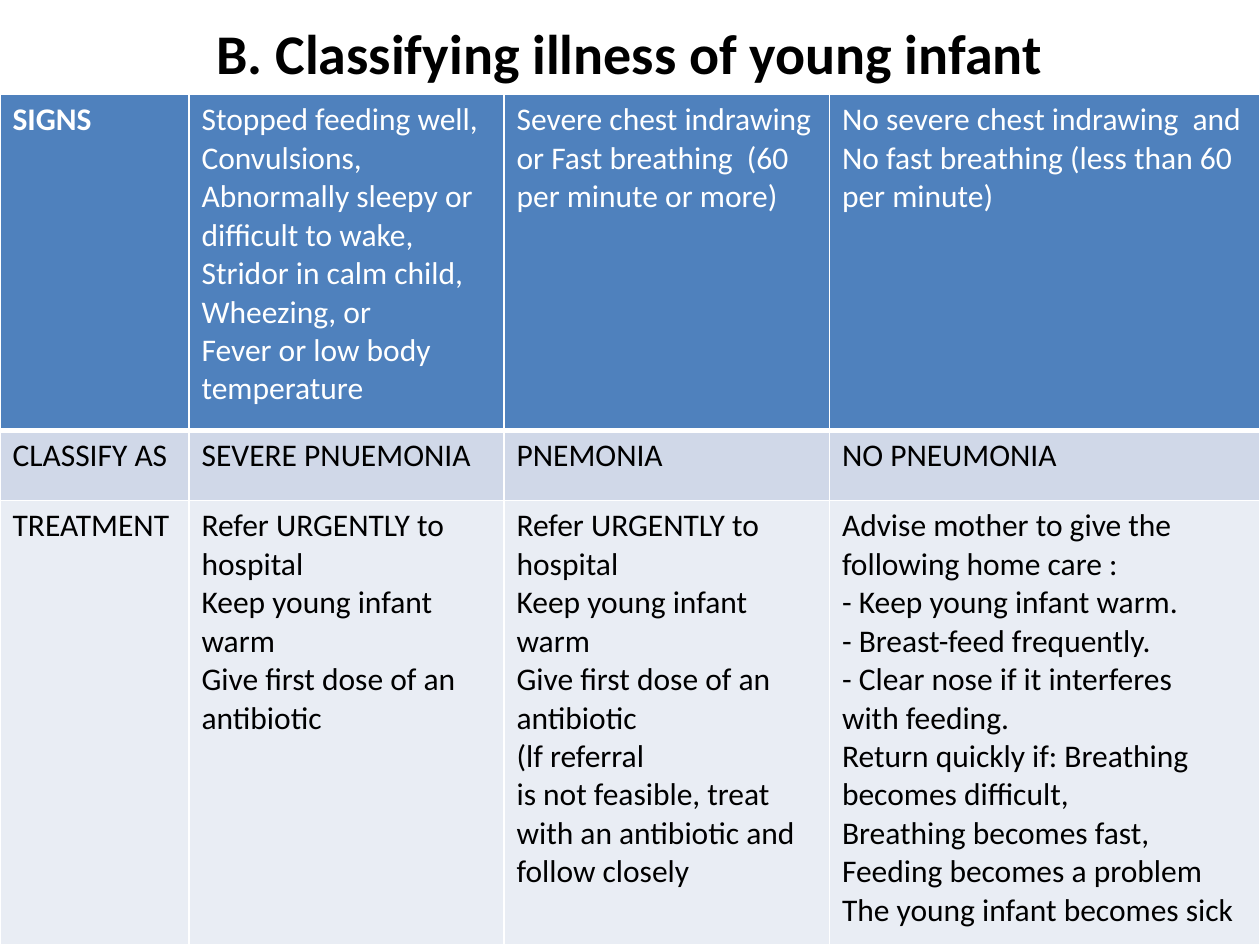
from lxml.etree import SubElement
from pptx import Presentation
from pptx.dml.color import RGBColor
from pptx.enum.text import MSO_ANCHOR, PP_ALIGN
from pptx.oxml.ns import qn
from pptx.util import Pt

TITLE = "B. Classifying illness of young infant"
REFER = [
    "Refer URGENTLY to hospital",
    "Keep young infant warm",
    "Give first dose of an antibiotic",
]
ROWS = [
    [
        ["SIGNS"],
        [
            "Stopped feeding well,",
            "Convulsions,",
            "Abnormally sleepy or difficult to wake,",
            "Stridor in calm child,",
            "Wheezing, or",
            "Fever or low body temperature",
        ],
        ["Severe chest indrawing or Fast breathing  (60 per minute or more)"],
        ["No severe chest indrawing  and No fast breathing (less than 60 per minute)"],
    ],
    [["CLASSIFY AS"], ["SEVERE PNUEMONIA"], ["PNEMONIA"], ["NO PNEUMONIA"]],
    [
        ["TREATMENT"],
        REFER,
        REFER + [
            "(lf referral",
            "is not feasible, treat",
            "with an antibiotic and",
            "follow closely",
        ],
        [
            "Advise mother to give the",
            "following home care :",
            "- Keep young infant warm.",
            "- Breast-feed frequently.",
            "- Clear nose if it interferes",
            "with feeding.",
            "Return quickly if: Breathing",
            "becomes difficult,",
            "Breathing becomes fast,",
            "Feeding becomes a problem",
            "The young infant becomes sick",
        ],
    ],
]

THEME = {
    "font": "Calibri",
    "title_size": 32,
    "cell_size": 18,
    "white": "FFFFFF",
    "black": "000000",
    "row_fills": ["4F81BD", "D0D8E8", "E9EDF4"],
}
SLIDE_W, SLIDE_H = 720, 540
TITLE_H = 60
TABLE_TOP = 54
COL_WIDTHS = [108, 180, 186, 246]
ROW_HEIGHTS = [192, 40, 254]
RULE, HEADER_RULE = 1, 3


def write_lines(tf, lines, size, color, bold=False, align=PP_ALIGN.LEFT):
    for i, line in enumerate(lines):
        p = tf.paragraphs[0] if i == 0 else tf.add_paragraph()
        p.alignment = align
        r = p.add_run()
        r.text = line
        fmt = {"name": THEME["font"], "size": Pt(size), "bold": bold}
        for key, value in fmt.items():
            setattr(r.font, key, value)
        r.font.color.rgb = RGBColor.from_string(color)


def set_borders(cell, widths):
    """Draw white cell borders; widths maps L, R, T, B to points."""
    tc_pr = cell._tc.get_or_add_tcPr()
    for i, (side, width) in enumerate(widths.items()):
        ln = SubElement(tc_pr, qn(f"a:ln{side}"), w=str(Pt(width)))
        fill = SubElement(ln, qn("a:solidFill"))
        SubElement(fill, qn("a:srgbClr"), val=THEME["white"])
        tc_pr.insert(i, ln)


def add_title(slide):
    sp = slide.shapes.add_textbox(0, 0, Pt(SLIDE_W), Pt(TITLE_H))
    tf = sp.text_frame
    tf.word_wrap = True
    tf.vertical_anchor = MSO_ANCHOR.MIDDLE
    write_lines(tf, [TITLE], THEME["title_size"], THEME["black"], True, PP_ALIGN.CENTER)


def add_classification_table(slide):
    frame = slide.shapes.add_table(
        len(ROWS), len(COL_WIDTHS), 0, Pt(TABLE_TOP), Pt(SLIDE_W), Pt(sum(ROW_HEIGHTS))
    )
    table = frame.table
    for col, width in zip(table.columns, COL_WIDTHS):
        col.width = Pt(width)
    for row, height in zip(table.rows, ROW_HEIGHTS):
        row.height = Pt(height)
    for r, row in enumerate(ROWS):
        color = THEME["white"] if r == 0 else THEME["black"]
        top = HEADER_RULE if r == 1 else RULE
        bottom = HEADER_RULE if r == 0 else RULE
        for c, lines in enumerate(row):
            cell = table.cell(r, c)
            cell.fill.solid()
            cell.fill.fore_color.rgb = RGBColor.from_string(THEME["row_fills"][r])
            set_borders(cell, {"L": RULE, "R": RULE, "T": top, "B": bottom})
            write_lines(cell.text_frame, lines, THEME["cell_size"], color, r == c == 0)


def main():
    prs = Presentation()
    prs.slide_width, prs.slide_height = Pt(SLIDE_W), Pt(SLIDE_H)
    slide = prs.slides.add_slide(prs.slide_layouts[6])
    add_title(slide)
    add_classification_table(slide)
    prs.save("out.pptx")


if __name__ == "__main__":
    main()
